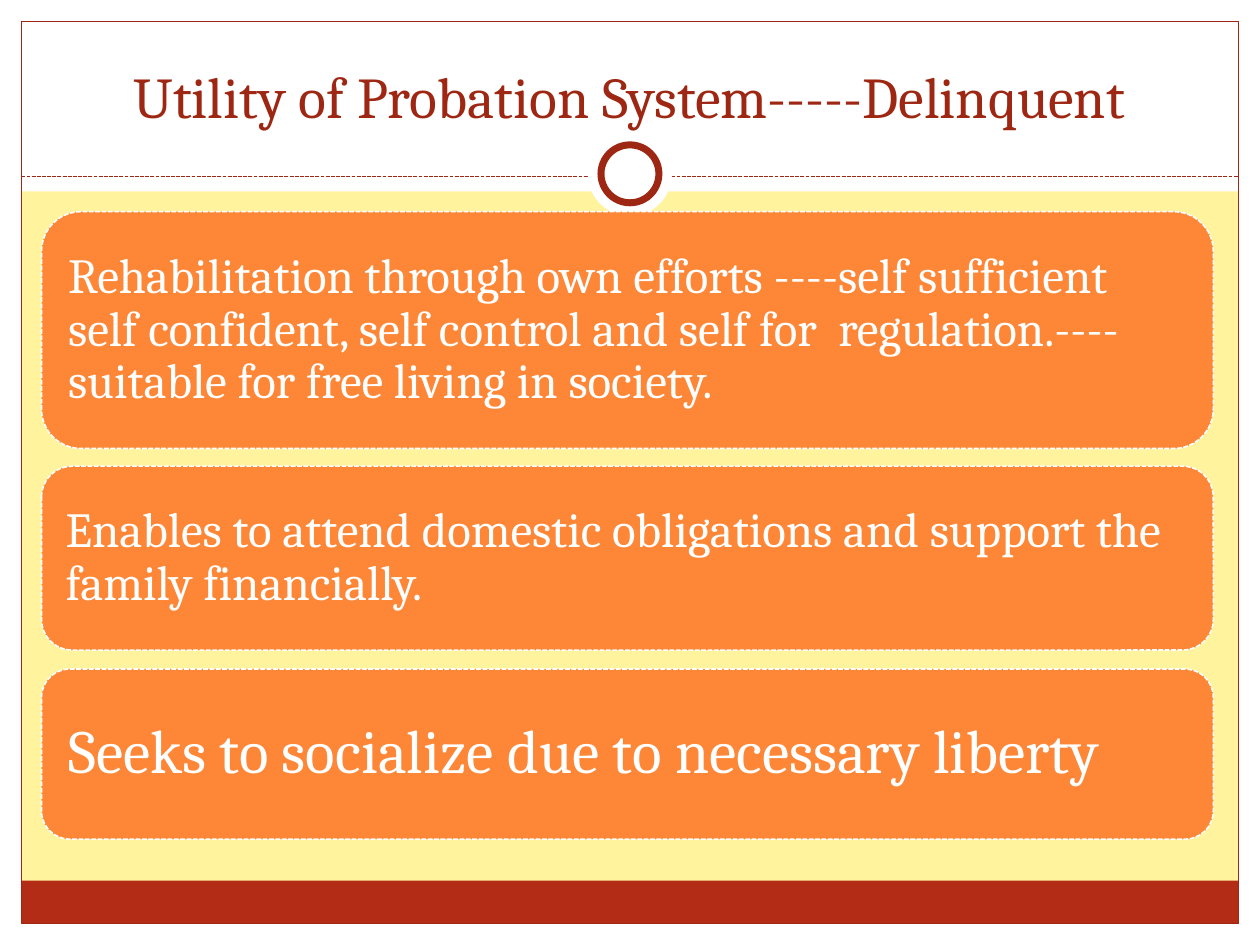
from dataclasses import dataclass

from lxml.etree import SubElement
from pptx import Presentation
from pptx.dml.color import RGBColor
from pptx.enum.dml import MSO_LINE
from pptx.enum.shapes import MSO_CONNECTOR, MSO_SHAPE
from pptx.enum.text import MSO_ANCHOR, PP_ALIGN
from pptx.oxml.ns import qn
from pptx.util import Inches, Pt


@dataclass(frozen=True)
class Theme:
    background: str = "FFF39D"
    white: str = "FFFFFF"
    dark_red: str = "9E2713"
    footer_red: str = "B32C16"
    orange: str = "FE8637"
    font: str = "Cambria"
    title_size: int = 33
    body_size: int = 28
    large_size: int = 35


THEME = Theme()
WIDTH, HEIGHT, MARGIN = 10, 7.5, 0.17
# Each card: text, top, height, type size, inset
CARDS = [
    ("Rehabilitation through own efforts ----self sufficient self confident, "
     "self control and self for  regulation.----suitable for free living in society.",
     1.68, 1.88, THEME.body_size, 0.12),
    ("Enables to attend domestic obligations and support the family financially.",
     3.7, 1.46, THEME.body_size, 0.12),
    ("Seeks to socialize due to necessary liberty",
     5.31, 1.35, THEME.large_size, 0.15),
]


def style_line(line, color, width, dash=None):
    line.color.rgb = RGBColor.from_string(color)
    line.width = Pt(width)
    if dash:
        line.dash_style = dash


def add_box(slide, kind, box, fill=None, line=None):
    """Add a preset shape; line is (color, width) or (color, width, dash)."""
    shape = slide.shapes.add_shape(kind, *map(Inches, box))
    shape.shadow.inherit = False
    if fill:
        shape.fill.solid()
        shape.fill.fore_color.rgb = RGBColor.from_string(fill)
    else:
        shape.fill.background()
    if line:
        style_line(shape.line, *line)
    else:
        shape.line.fill.background()
    return shape


def write_text(shape, text, *, size, color, align=PP_ALIGN.LEFT,
               anchor=MSO_ANCHOR.MIDDLE, insets=(0.1, 0.05),
               line_spacing=None, space_after=None):
    frame = shape.text_frame
    frame.word_wrap = True
    frame.vertical_anchor = anchor
    frame.margin_left = frame.margin_right = Inches(insets[0])
    frame.margin_top = frame.margin_bottom = Inches(insets[1])
    paragraph = frame.paragraphs[0]
    paragraph.alignment = align
    paragraph.line_spacing = line_spacing
    paragraph.space_after = space_after
    run = paragraph.add_run()
    run.text = text
    run.font.name = THEME.font
    run.font.size = Pt(size)
    run.font.color.rgb = RGBColor.from_string(color)


def add_page_frame(slide, box):
    left, top, width, height = box
    right, bottom = left + width, top + height
    # White margins and title band
    for margin in [(0, bottom, WIDTH, HEIGHT - bottom), (0, 0, WIDTH, 1.52),
                   (0, 0, left, HEIGHT), (right, 0, WIDTH - right, HEIGHT)]:
        add_box(slide, MSO_SHAPE.RECTANGLE, margin, THEME.white)
    # Footer bar and outline
    add_box(slide, MSO_SHAPE.RECTANGLE, (left, bottom - 0.34, width, 0.34),
            THEME.footer_red)
    add_box(slide, MSO_SHAPE.RECTANGLE, box, line=(THEME.dark_red, 0.75))


def add_divider(slide, left, right, y):
    # Dashed rule
    rule = slide.shapes.add_connector(
        MSO_CONNECTOR.STRAIGHT, *map(Inches, (left, y, right, y)))
    style_line(rule.line, THEME.dark_red, 0.75, MSO_LINE.SQUARE_DOT)
    SubElement(rule._element.spPr, qn("a:effectLst"))
    # Ring on a white disc, centred on the rule
    center_x, center_y = (left + right) / 2, y - 0.02
    for diameter, line in [(0.67, None), (0.46, (THEME.dark_red, 4))]:
        add_box(slide, MSO_SHAPE.OVAL,
                (center_x - diameter / 2, center_y - diameter / 2,
                 diameter, diameter), THEME.white, line)


def add_title(slide, box):
    title = slide.shapes.add_textbox(*map(Inches, box))
    write_text(title, "Utility of Probation System-----Delinquent",
               size=THEME.title_size, color=THEME.dark_red,
               align=PP_ALIGN.CENTER, anchor=MSO_ANCHOR.BOTTOM)


def add_card(slide, box, text, size, inset):
    card = add_box(slide, MSO_SHAPE.ROUNDED_RECTANGLE, box, THEME.orange,
                   (THEME.white, 0.9, MSO_LINE.SQUARE_DOT))
    write_text(card, text, size=size, color=THEME.white, insets=(inset, inset),
               line_spacing=0.9, space_after=Pt(round(size * 0.35)))


def main():
    presentation = Presentation()
    presentation.slide_width = Inches(WIDTH)
    presentation.slide_height = Inches(HEIGHT)
    slide = presentation.slides.add_slide(presentation.slide_layouts[6])
    background = slide.background.fill
    background.solid()
    background.fore_color.rgb = RGBColor.from_string(THEME.background)

    add_page_frame(slide, (MARGIN, MARGIN, WIDTH - 2 * MARGIN, HEIGHT - 2 * MARGIN))
    add_divider(slide, MARGIN, WIDTH - MARGIN, 1.4)
    add_title(slide, (0.33, 0.25, 9.33, 0.83))
    for text, top, height, size, inset in CARDS:
        add_card(slide, (0.33, top, 9.3, height), text, size, inset)
    presentation.save("out.pptx")


if __name__ == "__main__":
    main()
